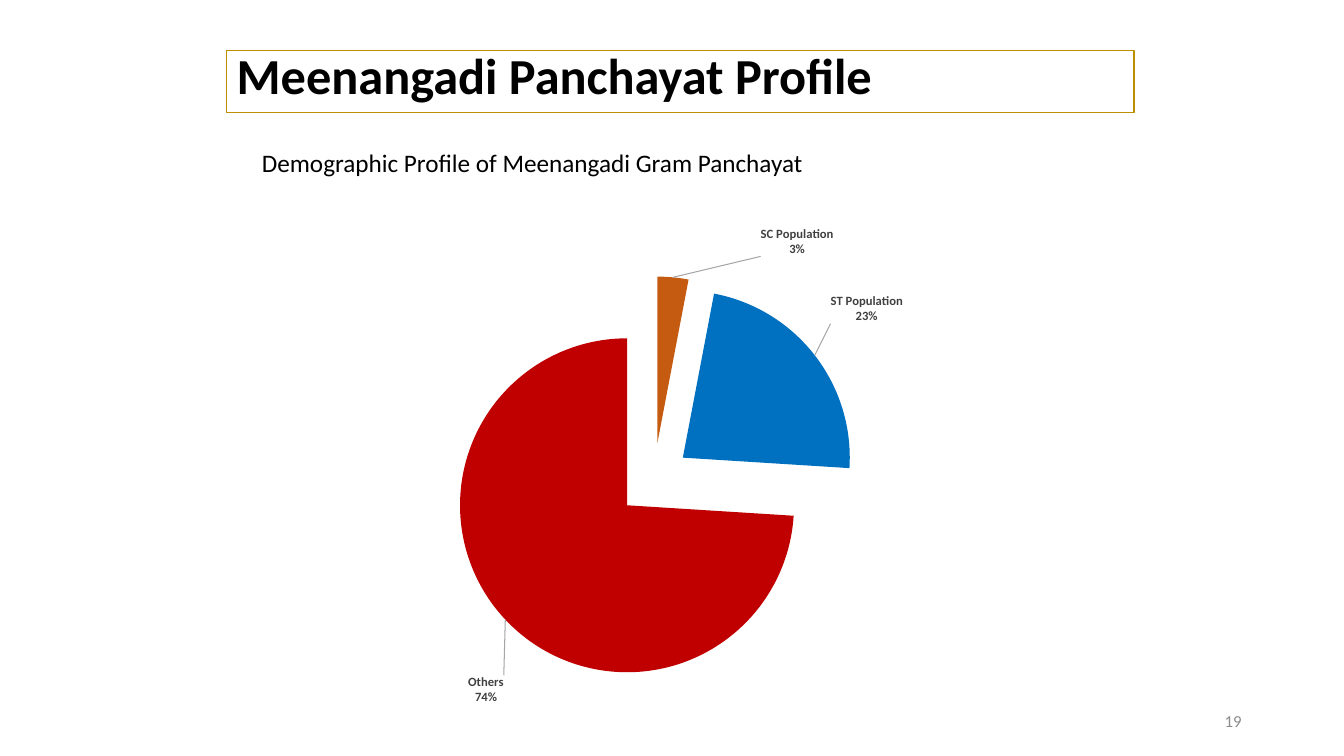
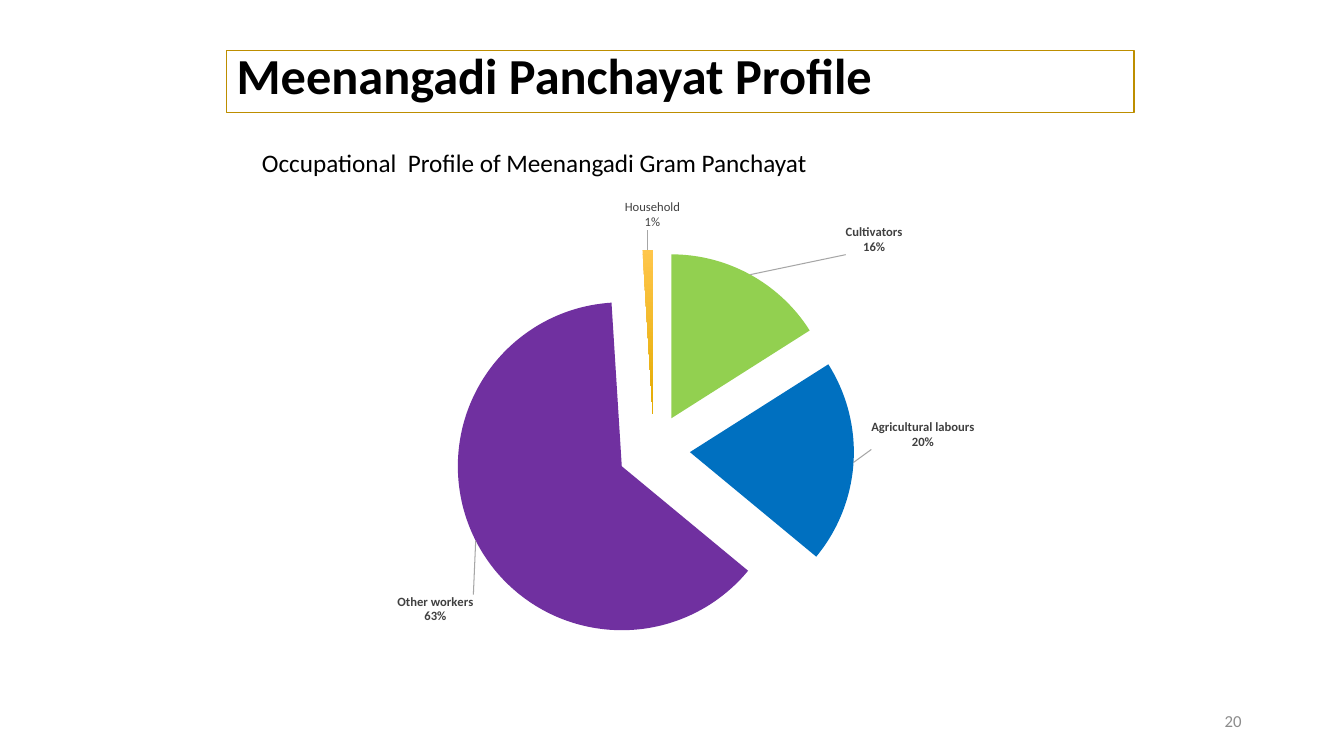
"""Build two Panchayat profile slides, each with an exploded pie chart."""
from dataclasses import dataclass

from lxml import etree
from pptx import Presentation
from pptx.chart.data import CategoryChartData
from pptx.dml.color import RGBColor
from pptx.enum import chart as ch, shapes, text
from pptx.oxml import ns, parse_xml
from pptx.util import Pt

COLORS = {
    "black": "000000", "gold": "BD8E00", "number": "8C8C8C", "label": "404040",
    "leader": "A6A6A6", "orange": "C55A11", "blue": "0070C0", "red": "C00000",
    "green": "92D050", "purple": "7030A0", "amber_light": "FFC64B", "amber_dark": "E3AB00",
}
FONT = "Calibri"
TITLE = "Meenangadi Panchayat Profile"
EXPLOSION = 22
PLOT_PERCENT = {"x": 3.5, "y": 13.9, "w": 81.4, "h": 75.6}


@dataclass(frozen=True)
class Slice:
    """A pie slice; dx and dy move its label by a percentage of the chart size."""
    name: str
    value: float
    fill: tuple[str, ...]
    dx: float
    dy: float
    bold: bool = True


@dataclass(frozen=True)
class Profile:
    """The content of one slide."""
    heading: str
    number: str
    chart_box: tuple[float, float, float, float]
    slices: tuple[Slice, ...]


PROFILES = (
    Profile("Demographic Profile of Meenangadi Gram Panchayat", "19", (174, 144, 663, 385), (
        Slice("SC Population", 0.03, ("orange",), 9.4, -2.8),
        Slice("ST Population", 0.23, ("blue",), 1.2, -5.2),
        Slice("Others", 0.74, ("red",), 0.3, 9.6),
    )),
    Profile("Occupational  Profile of Meenangadi Gram Panchayat", "20", (156, 126, 704, 378), (
        Slice("Cultivators", 0.16, ("green",), 9.4, -2.8),
        Slice("Agricultural labours", 0.2, ("blue",), 1.2, -5.3),
        Slice("Other workers", 0.63, ("purple",), 0.3, 9.7),
        Slice("Household", 0.01, ("amber_light", "amber_dark"), 0.5, -2.7, bold=False),
    )),
)


def rgb(name: str) -> RGBColor:
    """Return a named colour."""
    return RGBColor.from_string(COLORS[name])


def set_font(font, size: float, color: str, bold: bool = False) -> None:
    """Apply the deck's font with a size, colour and weight."""
    font.name, font.size, font.bold = FONT, Pt(size), bold
    font.color.rgb = rgb(color)


def add_text(slide, box, content: str, *, size: float, color: str = "black", bold: bool = False,
             align=text.PP_ALIGN.LEFT, anchor=text.MSO_ANCHOR.TOP, spacing: float = 1.0,
             bottom: float = 3.6, border: str = "") -> None:
    """Add a line of text, in a bordered rectangle if a border colour is given."""
    lengths = [Pt(v) for v in box]
    if border:
        sp = slide.shapes.add_shape(shapes.MSO_SHAPE.RECTANGLE, *lengths)
        sp.shadow.inherit = False
        sp.fill.background()
        sp.line.color.rgb = rgb(border)
        sp.line.width = Pt(1)
    else:
        sp = slide.shapes.add_textbox(*lengths)
    tf = sp.text_frame
    tf.word_wrap = True
    tf.vertical_anchor = anchor
    tf.margin_bottom = Pt(bottom)
    p = tf.paragraphs[0]
    p.alignment, p.line_spacing = align, spacing
    r = p.add_run()
    r.text = content
    set_font(r.font, size, color, bold)


def chart_xml(body: str) -> etree._Element:
    """Parse a chart element, declaring its namespaces."""
    tag, rest = body[1:].split(" ", 1)
    return parse_xml(f"<{tag} {ns.nsdecls('c', 'a')} {rest}")


def layout(**percent: float) -> etree._Element:
    """Return a manual layout: an inner plot area if it has a width, else a label offset."""
    parts = "".join(f'<c:{key} val="{value / 100:.3f}"/>' for key, value in percent.items())
    if "w" in percent:
        parts = ('<c:layoutTarget val="inner"/><c:xMode val="edge"/><c:yMode val="edge"/>'
                 + parts)
    return chart_xml(f"<c:layout ><c:manualLayout>{parts}</c:manualLayout></c:layout>")


def add_separator(labels: etree._Element) -> None:
    """Put the category and the value on separate lines."""
    labels.find(ns.qn("c:showBubbleSize")).addnext(chart_xml("<c:separator >\n</c:separator>"))


def format_slice(series, index: int, item: Slice) -> None:
    """Fill a slice and place its label."""
    point = series.points[index]
    fill = point.format.fill
    if len(item.fill) > 1:
        fill.gradient()
        fill.gradient_angle = 270
        for stop, name in zip(fill.gradient_stops, item.fill):
            stop.color.rgb = rgb(name)
    else:
        fill.solid()
        fill.fore_color.rgb = rgb(item.fill[0])
    point.format.line.fill.background()

    label = point.data_label
    set_font(label.font, 9, "label", item.bold)
    label.position = ch.XL_LABEL_POSITION.OUTSIDE_END
    element = series.data_labels._element.findall(ns.qn("c:dLbl"))[index]
    element.insert(1, layout(x=item.dx, y=item.dy))
    element.insert(2, chart_xml('<c:numFmt formatCode="0%" sourceLinked="0"/>'))
    element.find(ns.qn("c:showCatName")).set("val", "1")
    add_separator(element)


def add_pie(slide, box, slices: tuple[Slice, ...]) -> None:
    """Add an exploded pie chart with leader lines to its labels."""
    data = CategoryChartData(number_format="0%")
    data.categories = [item.name for item in slices]
    data.add_series("Series 1", [item.value for item in slices])
    chart = slide.shapes.add_chart(ch.XL_CHART_TYPE.PIE, *[Pt(v) for v in box], data).chart
    chart.has_legend = chart.has_title = False
    set_font(chart.font, 10, "black")
    plot = chart.plots[0]
    plot.vary_by_categories = True

    area = chart._chartSpace.chart.plotArea
    for old in area.findall(ns.qn("c:layout")):
        area.remove(old)
    area.insert(0, layout(**PLOT_PERCENT))

    series = plot.series[0]
    series._element.find(ns.qn("c:tx")).addnext(chart_xml(f'<c:explosion val="{EXPLOSION}"/>'))
    labels = series.data_labels
    labels.show_value = labels.show_category_name = True
    labels.number_format, labels.number_format_is_linked = "0%", False
    labels.position = ch.XL_LABEL_POSITION.OUTSIDE_END
    set_font(labels.font, 9, "label", True)
    add_separator(labels._element)
    labels._element.append(chart_xml(
        '<c:leaderLines ><c:spPr><a:ln w="9525"><a:solidFill>'
        f'<a:srgbClr val="{COLORS["leader"]}"/></a:solidFill></a:ln></c:spPr></c:leaderLines>'))
    for index, item in enumerate(slices):
        format_slice(series, index, item)


def add_profile(prs, profile: Profile) -> None:
    """Add a slide with title, heading, pie chart and slide number."""
    slide = prs.slides.add_slide(prs.slide_layouts[6])
    add_text(slide, (162, 36, 648, 44.5), TITLE, size=36, bold=True, border="gold",
             anchor=text.MSO_ANCHOR.MIDDLE, spacing=0.9, bottom=8)
    add_pie(slide, profile.chart_box, profile.slices)
    add_text(slide, (180, 101.5, 438, 29), profile.heading, size=18)
    add_text(slide, (678, 500.5, 216, 28.75), profile.number, size=12, color="number",
             align=text.PP_ALIGN.RIGHT, anchor=text.MSO_ANCHOR.MIDDLE)


def main() -> None:
    """Build and save the presentation."""
    prs = Presentation()
    prs.slide_width, prs.slide_height = Pt(960), Pt(540)
    for profile in PROFILES:
        add_profile(prs, profile)
    prs.save("out.pptx")


if __name__ == "__main__":
    main()
